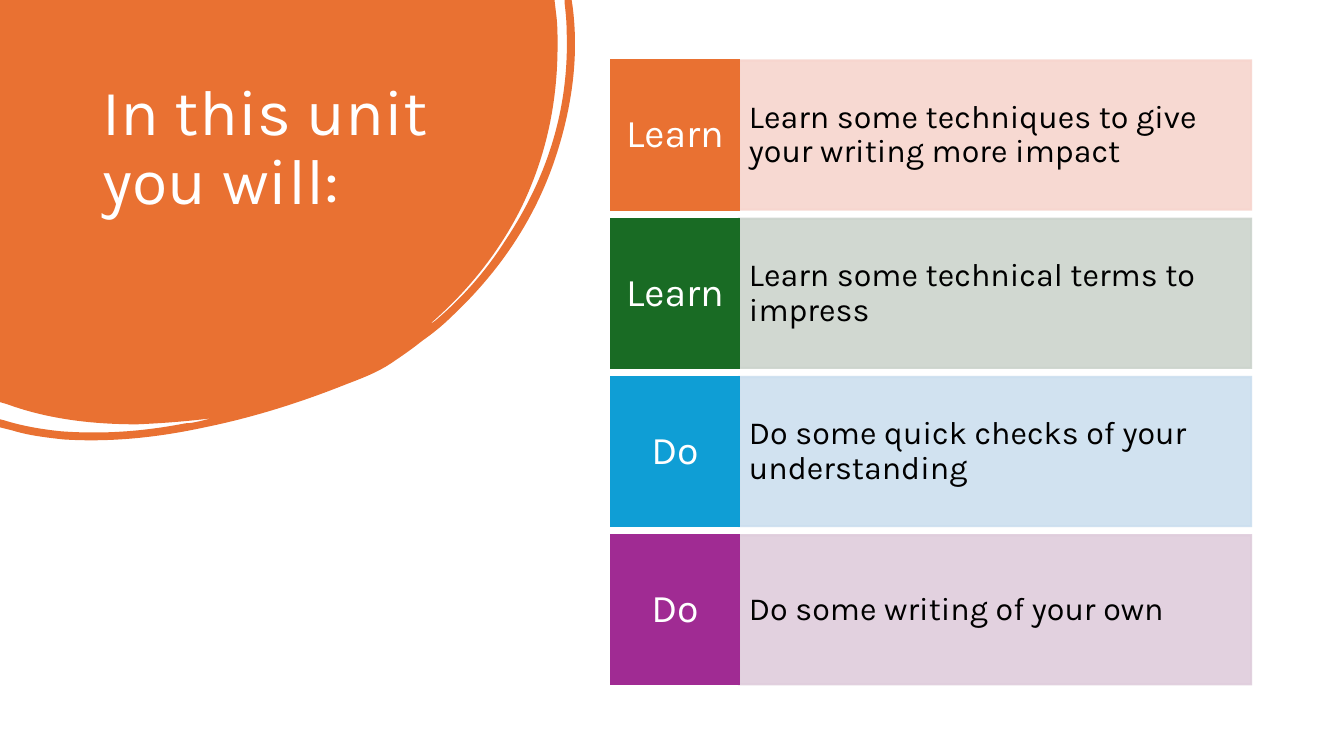
from lxml.etree import Element, SubElement
from pptx import Presentation
from pptx.dml.color import RGBColor
from pptx.enum.shapes import MSO_SHAPE
from pptx.enum.text import MSO_ANCHOR, MSO_AUTO_SIZE, PP_ALIGN
from pptx.oxml.ns import qn
from pptx.util import Inches, Pt

FONT = "Karla"
WHITE = RGBColor(0xFF, 0xFF, 0xFF)
BLACK = RGBColor(0x00, 0x00, 0x00)
ORANGE = RGBColor(0xE9, 0x71, 0x32)
GREEN = RGBColor(0x19, 0x6B, 0x24)
BLUE = RGBColor(0x0F, 0x9E, 0xD5)
PURPLE = RGBColor(0xA0, 0x2B, 0x93)
PALE_ORANGE = RGBColor(0xF7, 0xD5, 0xCE)
PALE_GREEN = RGBColor(0xCC, 0xD4, 0xCD)
PALE_BLUE = RGBColor(0xCC, 0xDF, 0xEF)
PALE_PURPLE = RGBColor(0xDF, 0xCD, 0xDC)

# Content
TITLE = "In this unit you will:"
GOALS = [
    ("Learn", "Learn some techniques to give your writing more impact", ORANGE, PALE_ORANGE),
    ("Learn", "Learn some technical terms to impress", GREEN, PALE_GREEN),
    ("Do", "Do some quick checks of your understanding", BLUE, PALE_BLUE),
    ("Do", "Do some writing of your own", PURPLE, PALE_PURPLE),
]

# Blob outline in inches: two numbers are a straight step, six are a Bezier curve
BLOB = [
    (0, 0), (5.5, 0), (5.52, 0.17),
    (5.53, 0.26, 5.53, 0.36, 5.53, 0.45),
    (5.53, 1.01, 5.42, 1.54, 5.18, 2.04),
    (4.96, 2.49, 4.65, 2.88, 4.27, 3.21),
    (4.29, 3.21, 4.3, 3.19, 4.32, 3.18),
    (4.59, 2.95, 4.82, 2.69, 5.01, 2.39),
    (5.43, 1.76, 5.65, 1.07, 5.62, 0.3),
    (5.62, 0.21, 5.61, 0.12, 5.6, 0.03),
    (5.6, 0), (5.67, 0), (5.68, 0.07),
    (5.74, 0.54, 5.68, 1.02, 5.53, 1.5),
    (5.33, 2.14, 4.97, 2.68, 4.48, 3.14),
    (4.39, 3.23, 4.29, 3.31, 4.19, 3.38),
    (4.09, 3.46, 3.99, 3.53, 3.87, 3.61),
    (3.75, 3.69, 3.6, 3.75, 3.44, 3.81),
    (2.99, 3.99, 2.52, 4.14, 2.03, 4.24),
    (1.57, 4.34, 1.1, 4.39, 0.63, 4.36),
    (0.45, 4.34, 0.28, 4.32, 0.12, 4.27),
    (0, 4.24), (0, 4.16), (0.04, 4.17),
    (0.23, 4.23, 0.42, 4.26, 0.61, 4.28),
    (1.03, 4.31, 1.43, 4.28, 1.84, 4.2),
    (1.89, 4.2, 1.93, 4.19, 1.98, 4.18),
    (2.02, 4.17, 2.06, 4.16, 2.1, 4.15),
    (1.86, 4.18, 1.61, 4.2, 1.36, 4.21),
    (0.92, 4.21, 0.48, 4.16, 0.07, 4.01),
    (0, 3.99),
]
UNITS = 100  # outline units per inch

# Row geometry in inches
TOP, PITCH, HEIGHT = 0.6, 1.57, 1.48
LABEL_LEFT, LABEL_WIDTH = 6.06, 1.27
GOAL_LEFT, GOAL_WIDTH = LABEL_LEFT + LABEL_WIDTH, 5.08


def add_blob(page):
    steps = [[round(value * UNITS) for value in step] for step in BLOB]
    builder = page.shapes.build_freeform(*steps[0], scale=Inches(1) / UNITS)
    builder.add_line_segments([step[-2:] for step in steps[1:]], close=True)
    blob = builder.convert_to_shape()
    # Turn the straight steps that have control points into curves
    segments = list(blob._element.iter(qn("a:lnTo")))
    for segment, step in zip(segments, steps[1:]):
        if len(step) == 6:
            segment.tag = qn("a:cubicBezTo")
            for place in (0, 1):
                x, y = step[2 * place:2 * place + 2]
                segment.insert(place, Element(qn("a:pt"), x=str(x), y=str(y)))
    blob.shadow.inherit = False
    blob.fill.solid()
    blob.fill.fore_color.rgb = ORANGE
    blob.line.fill.background()
    return blob


def write(frame, text, size, color, align=PP_ALIGN.LEFT):
    frame.word_wrap = True
    para = frame.paragraphs[0]
    para.alignment = align
    para.line_spacing = 0.9
    span = para.add_run()
    span.text = text
    span.font.name = FONT
    span.font.size = Pt(size)
    span.font.color.rgb = color


def add_tile(page, left, top, width, color, inset_x, inset_y, opacity=100):
    box = page.shapes.add_shape(MSO_SHAPE.RECTANGLE, Inches(left), Inches(top),
                                Inches(width), Inches(HEIGHT))
    box.shadow.inherit = False
    box.fill.solid()
    box.fill.fore_color.rgb = color
    box.line.color.rgb = color
    box.line.width = Pt(1.5)
    # Square corners on the border
    SubElement(next(box._element.iter(qn("a:ln"))), qn("a:miter"), lim="800000")
    if opacity < 100:
        for shade in box._element.iter(qn("a:srgbClr")):
            SubElement(shade, qn("a:alpha"), val=str(opacity * 1000))
    frame = box.text_frame
    frame.vertical_anchor = MSO_ANCHOR.MIDDLE
    frame.margin_left = frame.margin_right = Inches(inset_x)
    frame.margin_top = frame.margin_bottom = Inches(inset_y)
    return frame


def main():
    deck = Presentation()
    deck.slide_width, deck.slide_height = Inches(13.33), Inches(7.5)
    page = deck.slides.add_slide(deck.slide_layouts[5])

    # Orange blob, then the title in front of it
    blob = add_blob(page)
    title = page.shapes.title
    title.left, title.top = Inches(0.92), Inches(0.74)
    title.width, title.height = Inches(3.52), Inches(2.22)
    title.text_frame.auto_size = MSO_AUTO_SIZE.NONE
    title.text_frame.vertical_anchor = MSO_ANCHOR.TOP
    write(title.text_frame, TITLE, 46, WHITE)
    blob._element.addnext(title._element)

    # Goal rows
    for row, (label, goal, color, pale) in enumerate(GOALS):
        top = TOP + row * PITCH
        write(add_tile(page, GOAL_LEFT, top, GOAL_WIDTH, pale, 0.1, 0.38, opacity=90),
              goal, 23, BLACK)
        write(add_tile(page, LABEL_LEFT, top, LABEL_WIDTH, color, 0.07, 0.15),
              label, 28, WHITE, PP_ALIGN.CENTER)

    deck.save("out.pptx")


if __name__ == "__main__":
    main()
